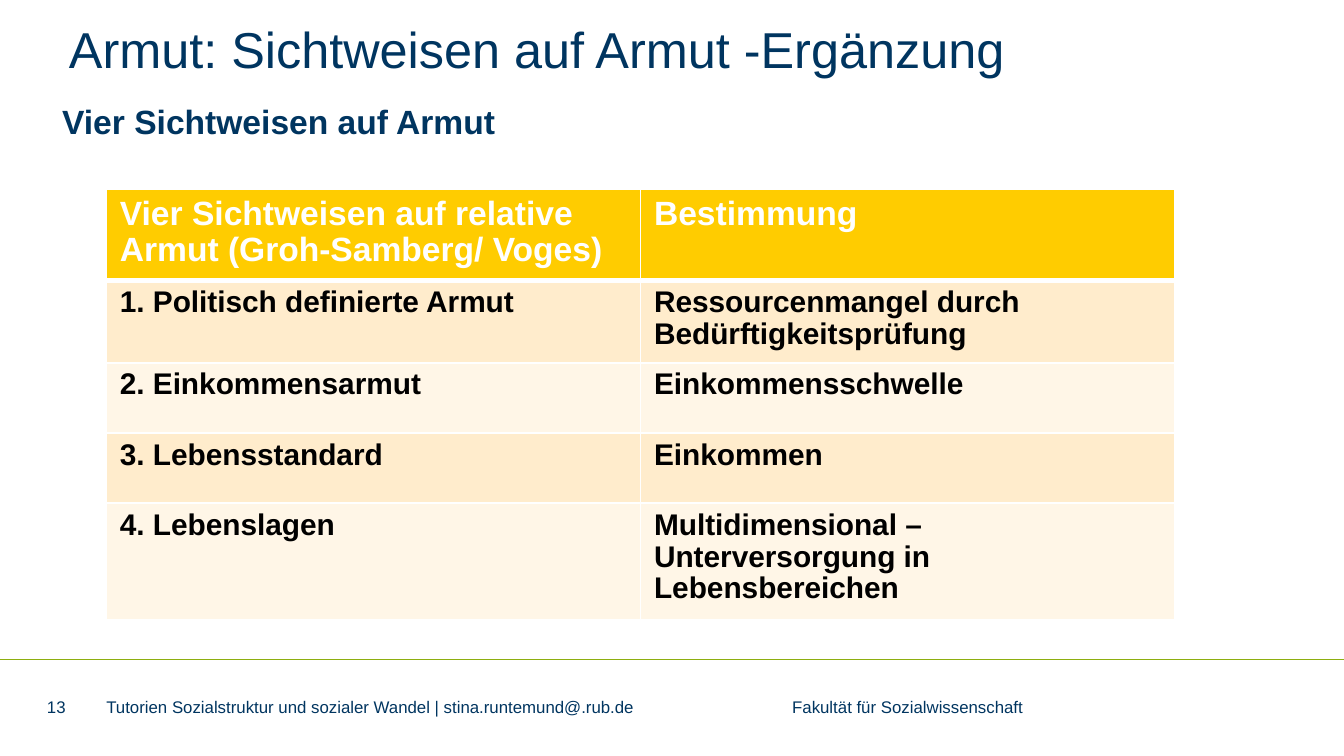
from lxml.etree import SubElement
from pptx import Presentation
from pptx.dml.color import RGBColor
from pptx.enum.shapes import MSO_CONNECTOR
from pptx.enum.text import MSO_ANCHOR
from pptx.oxml.ns import qn
from pptx.util import Pt

NAVY = RGBColor(0x00, 0x35, 0x60)
GREEN = RGBColor(0x8D, 0xAE, 0x10)
WHITE = RGBColor(0xFF, 0xFF, 0xFF)
BLACK = RGBColor(0x00, 0x00, 0x00)
GOLD = RGBColor(0xFF, 0xCC, 0x00)
CREAM = RGBColor(0xFF, 0xEC, 0xCC)
PALE_CREAM = RGBColor(0xFF, 0xF6, 0xE7)

VIEWS = [
    ("Vier Sichtweisen auf relative Armut (Groh-Samberg/ Voges)", "Bestimmung"),
    ("1. Politisch definierte Armut", "Ressourcenmangel durch Bedürftigkeitsprüfung"),
    ("2. Einkommensarmut", "Einkommensschwelle"),
    ("3. Lebensstandard", "Einkommen"),
    ("4. Lebenslagen", "Multidimensional – Unterversorgung in Lebensbereichen"),
]


class SlideBuilder:
    font_name = "Arial"
    line_spacing = 0.96

    def __init__(self, slide):
        self.slide = slide

    def style(self, paragraph, color, **formats):
        for name, value in {"name": self.font_name, **formats}.items():
            setattr(paragraph.font, name, value)
        paragraph.font.color.rgb = color

    def text(self, wording, left, top, width, height, tab=None,
             anchor=MSO_ANCHOR.TOP, **formats):
        """Add a box without insets; tab is an optional tab stop in points."""
        box = self.slide.shapes.add_textbox(Pt(left), Pt(top), Pt(width), Pt(height))
        frame = box.text_frame
        settings = {"word_wrap": True, "vertical_anchor": anchor, "margin_left": 0,
                    "margin_top": 0, "margin_right": 0, "margin_bottom": 0}
        for name, value in settings.items():
            setattr(frame, name, value)
        paragraph = frame.paragraphs[0]
        paragraph.text = wording
        if tab:
            stops = SubElement(paragraph._p.get_or_add_pPr(), qn("a:tabLst"))
            SubElement(stops, qn("a:tab"), pos=str(Pt(tab)), algn="l")
        self.style(paragraph, NAVY, **formats)

    def rule(self, top, width):
        line = self.slide.shapes.add_connector(
            MSO_CONNECTOR.STRAIGHT, 0, Pt(top), Pt(width), Pt(top))
        line.line.color.rgb = GREEN
        line.line.width = Pt(0.5)
        SubElement(line._element.spPr, qn("a:effectLst"))

    def borders(self, cell, top, bottom):
        properties = cell._tc.get_or_add_tcPr()
        for side, width in {"L": 1, "R": 1, "T": top, "B": bottom}.items():
            edge = SubElement(properties, qn(f"a:ln{side}"), w=str(Pt(width)))
            fill = SubElement(edge, qn("a:solidFill"))
            SubElement(fill, qn("a:srgbClr"), val=str(WHITE))

    def table(self, rows, left, top, width, row_height):
        """Add a table with a header row and alternating body rows."""
        table = self.slide.shapes.add_table(
            len(rows), len(rows[0]), Pt(left), Pt(top),
            Pt(width), Pt(row_height * len(rows))).table
        for row_index, wordings in enumerate(rows):
            header = row_index == 0
            banding = CREAM if row_index % 2 else PALE_CREAM
            for column_index, wording in enumerate(wordings):
                cell = table.cell(row_index, column_index)
                cell.text = wording
                self.borders(cell, 3 if row_index == 1 else 1, 3 if header else 1)
                cell.fill.solid()
                cell.fill.fore_color.rgb = GOLD if header else banding
                paragraph = cell.text_frame.paragraphs[0]
                paragraph.line_spacing = self.line_spacing
                self.style(paragraph, WHITE if header else BLACK,
                           size=Pt(18 if header else 16), bold=True)


def main():
    presentation = Presentation()
    presentation.slide_width = Pt(720)
    presentation.slide_height = Pt(405)
    builder = SlideBuilder(presentation.slides.add_slide(presentation.slide_layouts[6]))

    builder.rule(353.3, 720)
    builder.text("Armut: Sichtweisen auf Armut -Ergänzung",
                 37, 9.5, 595.5, 36.5, size=Pt(27))
    builder.text("Vier Sichtweisen auf Armut", 33.3, 54, 695.5, 284.5,
                 size=Pt(18), bold=True)
    footer = {"top": 374.4, "height": 9, "anchor": MSO_ANCHOR.MIDDLE, "size": Pt(9)}
    builder.text("Tutorien Sozialstruktur und sozialer Wandel | stina.runtemund@.rub.de"
                 "\tFakultät für Sozialwissenschaft",
                 left=57, width=496, tab=367.4, **footer)
    builder.text("13", left=25.2, width=20, **footer)
    builder.table(VIEWS, 57, 101.5, 572.4, 37.6)
    presentation.save("out.pptx")


if __name__ == "__main__":
    main()
